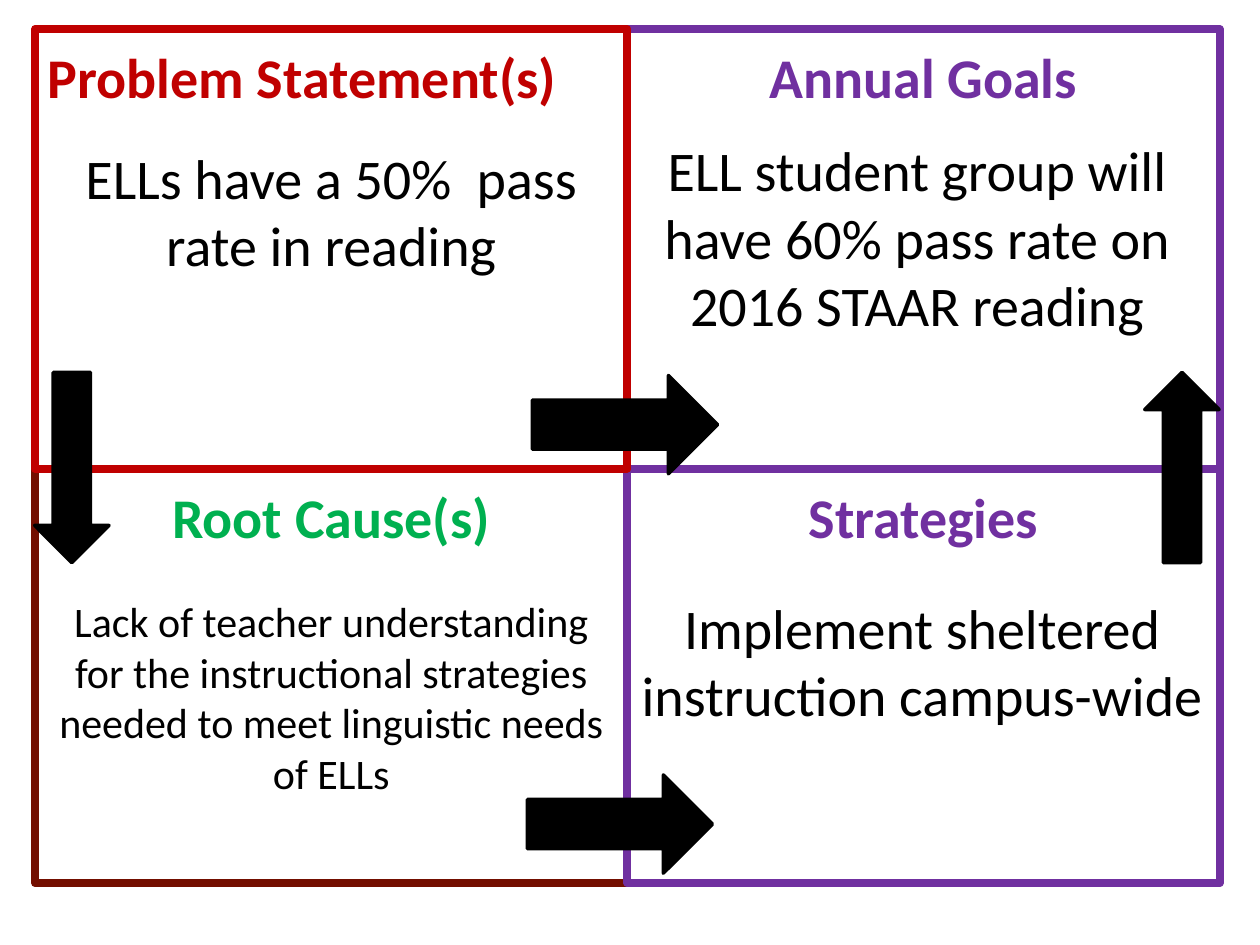
import dataclasses

import pptx
import pptx.dml.color
import pptx.enum.shapes
import pptx.enum.text
import pptx.util

ALIGN = pptx.enum.text.PP_ALIGN
SHAPES = pptx.enum.shapes.MSO_SHAPE


@dataclasses.dataclass(frozen=True)
class Theme:
    font: str = "Calibri"
    heading_size: int = 32
    small_size: int = 24
    border_width: float = 4.5
    arrow_line_width: float = 2
    black: str = "000000"
    white: str = "FFFFFF"
    red: str = "C00000"
    brown: str = "730E00"
    green: str = "00B050"
    purple: str = "7030A0"


THEME = Theme()

# Grid of two columns and two rows, in inches
COLUMN_WIDTH = 4.7
COLUMN_LEFTS = (0.28, 0.28 + COLUMN_WIDTH)
ROW_HEIGHTS = (3.49, 3.29)
ROW_TOPS = (0.23, 0.23 + ROW_HEIGHTS[0])
HEADING_OFFSET = 0.06
HEADING_HEIGHT = 0.85


@dataclasses.dataclass(frozen=True)
class Quadrant:
    column: int
    row: int
    heading: str
    body: str
    border: str
    heading_color: str
    body_offset: float
    body_height: float
    body_width: float = COLUMN_WIDTH
    body_size: int = THEME.heading_size
    heading_align: ALIGN = ALIGN.CENTER
    fill: str = ""


QUADRANTS = (
    Quadrant(0, 1, "Root Cause(s)",
             "Lack of teacher understanding for the instructional strategies "
             "needed to meet linguistic needs of ELLs",
             THEME.brown, THEME.green, 0.96, 2.29,
             body_size=THEME.small_size, fill=THEME.white),
    Quadrant(1, 1, "Strategies", "Implement sheltered instruction campus-wide",
             THEME.purple, THEME.purple, 0.94, 1.57, body_width=4.68),
    Quadrant(1, 0, "Annual Goals",
             "ELL student group will have 60% pass rate on 2016 STAAR reading",
             THEME.purple, THEME.purple, 0.8, 2.29, body_width=4.6),
    Quadrant(0, 0, "Problem Statement(s)",
             "ELLs have a 50%  pass rate in reading",
             THEME.red, THEME.red, 0.86, 1.57, heading_align=ALIGN.LEFT),
)

# Centre x, centre y, width, length, rotation from pointing down
ARROWS = (
    (0.57, 3.71, 0.59, 1.51, 0),
    (4.96, 3.37, 0.78, 1.47, 270),
    (4.92, 6.54, 0.78, 1.47, 270),
    (9.38, 3.71, 0.59, 1.51, 180),
)


def rgb(color):
    return pptx.dml.color.RGBColor.from_string(color)


def add_outlined_shape(slide, kind, box, line_color, line_width, fill=""):
    shape = slide.shapes.add_shape(kind, *map(pptx.util.Inches, box))
    shape.shadow.inherit = False
    if fill:
        shape.fill.solid()
        shape.fill.fore_color.rgb = rgb(fill)
    else:
        shape.fill.background()
    shape.line.color.rgb = rgb(line_color)
    shape.line.width = pptx.util.Pt(line_width)
    return shape


def add_text(slide, box, text, size, color, align=ALIGN.CENTER, bold=False):
    text_box = slide.shapes.add_textbox(*map(pptx.util.Inches, box))
    text_frame = text_box.text_frame
    text_frame.word_wrap = True
    text_frame.text = text
    paragraph = text_frame.paragraphs[0]
    paragraph.alignment = align
    for run in paragraph.runs:
        run.font.name = THEME.font
        run.font.size = pptx.util.Pt(size)
        run.font.bold = bold
        run.font.color.rgb = rgb(color)


def add_quadrant_border(slide, quadrant):
    box = (COLUMN_LEFTS[quadrant.column], ROW_TOPS[quadrant.row],
           COLUMN_WIDTH, ROW_HEIGHTS[quadrant.row])
    add_outlined_shape(slide, SHAPES.RECTANGLE, box, quadrant.border,
                       THEME.border_width, quadrant.fill)


def add_quadrant_text(slide, quadrant):
    left, top = COLUMN_LEFTS[quadrant.column], ROW_TOPS[quadrant.row]
    add_text(slide, (left, top + HEADING_OFFSET, COLUMN_WIDTH, HEADING_HEIGHT),
             quadrant.heading, THEME.heading_size, quadrant.heading_color,
             quadrant.heading_align, bold=True)
    add_text(slide, (left, top + quadrant.body_offset,
                     quadrant.body_width, quadrant.body_height),
             quadrant.body, quadrant.body_size, THEME.black)


def add_arrow(slide, center_x, center_y, width, length, rotation):
    box = (center_x - width / 2, center_y - length / 2, width, length)
    arrow = add_outlined_shape(slide, SHAPES.DOWN_ARROW, box, THEME.black,
                               THEME.arrow_line_width, THEME.black)
    arrow.rotation = rotation


def main():
    presentation = pptx.Presentation()
    presentation.slide_width = pptx.util.Inches(10)
    presentation.slide_height = pptx.util.Inches(7.5)
    blank_layout = presentation.slide_layouts[6]
    slide = presentation.slides.add_slide(blank_layout)
    for quadrant in QUADRANTS:
        add_quadrant_border(slide, quadrant)
    for arrow in ARROWS:
        add_arrow(slide, *arrow)
    for quadrant in QUADRANTS:
        add_quadrant_text(slide, quadrant)
    presentation.save("out.pptx")


if __name__ == "__main__":
    main()
